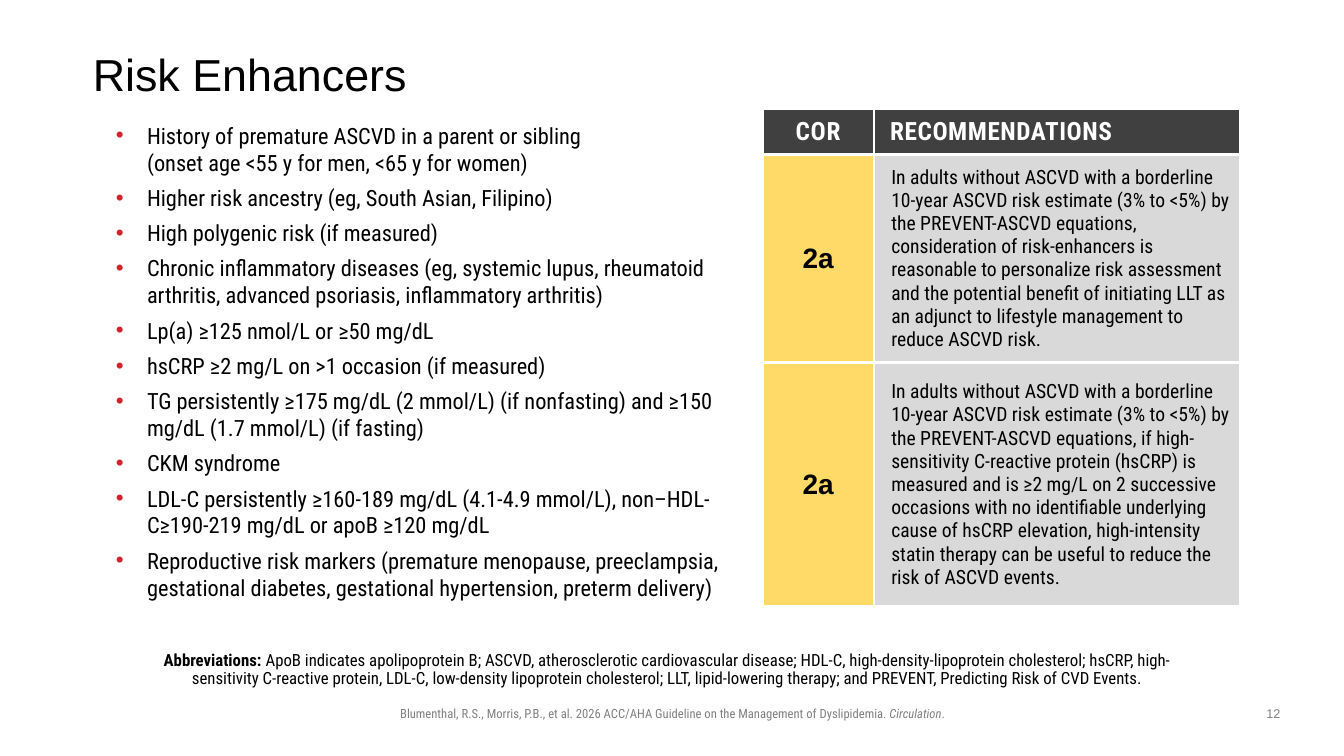
from copy import deepcopy

from lxml import etree
from pptx import Presentation
from pptx.dml.color import RGBColor
from pptx.enum.text import MSO_ANCHOR as Anchor, MSO_AUTO_SIZE as AutoSize, PP_ALIGN as Align
from pptx.oxml import parse_xml
from pptx.oxml.ns import nsdecls, qn
from pptx.util import Pt

# Content
TITLE = "Risk Enhancers"
ENHANCERS = [
    "History of premature ASCVD in a parent or sibling \n(onset age <55 y for men, <65 y for women)",
    "Higher risk ancestry (eg, South Asian, Filipino)",
    "High polygenic risk (if measured)",
    "Chronic inflammatory diseases (eg, systemic lupus, rheumatoid arthritis, "
    "advanced psoriasis, inflammatory arthritis)",
    "Lp(a) ≥125 nmol/L or ≥50 mg/dL",
    "hsCRP ≥2 mg/L on >1 occasion (if measured)",
    "TG persistently ≥175 mg/dL (2 mmol/L) (if nonfasting) and ≥150 mg/dL (1.7 mmol/L) (if fasting)",
    "CKM syndrome",
    "LDL-C persistently ≥160-189 mg/dL (4.1-4.9 mmol/L), non–HDL-C≥190-219 mg/dL or apoB ≥120 mg/dL",
    "Reproductive risk markers (premature menopause, preeclampsia, gestational diabetes, "
    "gestational hypertension, preterm delivery)",
]
HEADERS = ("COR", "RECOMMENDATIONS")
RECOMMENDATIONS = [
    ("2a", "In adults without ASCVD with a borderline 10-year ASCVD risk estimate (3% to <5%) by the "
           "PREVENT-ASCVD equations, consideration of risk-enhancers is reasonable to personalize risk "
           "assessment and the potential benefit of initiating LLT as an adjunct to lifestyle management "
           "to reduce ASCVD risk."),
    ("2a", "In adults without ASCVD with a borderline 10-year ASCVD risk estimate (3% to <5%) by the "
           "PREVENT-ASCVD equations, if high-sensitivity C-reactive protein (hsCRP) is measured and is "
           "≥2 mg/L on 2 successive occasions with no identifiable underlying cause of hsCRP elevation, "
           "high-intensity statin therapy can be useful to reduce the risk of ASCVD events."),
]
ABBREVIATIONS = (
    "Abbreviations: ",
    "ApoB indicates apolipoprotein B; ASCVD, atherosclerotic cardiovascular disease; HDL-C, "
    "high-density-lipoprotein cholesterol; hsCRP, high-sensitivity C-reactive protein, LDL-C, "
    "low-density lipoprotein cholesterol; LLT, lipid-lowering therapy; and PREVENT, Predicting Risk "
    "of CVD Events.",
)
CITATION = (
    "Blumenthal, R.S., Morris, P.B., et al. 2026 ACC/AHA Guideline on the Management of Dyslipidemia. ",
    "Circulation",
    ".",
)
SLIDE_NUMBER = "12"

# Lengths in px, 100 to the inch
PX = 9144
SLIDE_SIZE = (1333, 750)
TITLE_BOX = (92, 40, 1150, 72)
LIST_BOX = (105, 116, 628, 490)
TABLE_BOX = (756, 108, 474, 494)
COLUMN_WIDTHS = (111, 363)
ROW_HEIGHTS = (45, 207, 242)
ABBREVIATIONS_BOX = (161, 642, 1012, 46)
CITATION_BOX = (236, 695, 862, 25)
NUMBER_BOX = (1242, 695, 42, 26)
BULLET_INDENT = 31

BLACK = RGBColor(0x00, 0x00, 0x00)
WHITE = RGBColor(0xFF, 0xFF, 0xFF)
GRAY = RGBColor(0x80, 0x80, 0x80)
DARK = RGBColor(0x40, 0x40, 0x40)
LIGHT = RGBColor(0xD9, 0xD9, 0xD9)
YELLOW = RGBColor(0xFF, 0xDA, 0x68)
RED = RGBColor(0xCF, 0x24, 0x2A)

ROBOTO = "Roboto Condensed"
TITLE_FONT = dict(name="Arial", size=Pt(32), color=BLACK)
LIST_FONT = dict(name=ROBOTO, size=Pt(16), color=BLACK)
HEADER_FONT = dict(name=ROBOTO, size=Pt(18), color=WHITE, bold=True)
CLASS_FONT = dict(name="Arial", size=Pt(20), color=BLACK, bold=True)
BODY_FONT = dict(name=ROBOTO, size=Pt(14), color=BLACK, bold=False)
SMALL_FONT = dict(name=ROBOTO, size=Pt(12), color=BLACK)
CITATION_FONT = dict(name=ROBOTO, size=Pt(9), color=GRAY)
NUMBER_FONT = dict(name="Arial", size=Pt(9), color=GRAY)


def set_values(target, values):
    for name, value in values.items():
        setattr(target, name, value)


def add_text(paragraph, text, font):
    """Add one run per line, with line breaks of the same font between them."""
    for index, line in enumerate(text.split("\n")):
        if index:
            paragraph.add_line_break()
        run = paragraph.add_run()
        run.text = line
        set_values(run.font, {key: value for key, value in font.items() if key != "color"})
        run.font.color.rgb = font["color"]
    for line_break in paragraph._p.findall(qn("a:br")):
        line_break.append(deepcopy(run._r.rPr))
    return run


def add_box(slide, box, **frame_format):
    frame = slide.shapes.add_textbox(*(length * PX for length in box)).text_frame
    set_values(frame, dict(word_wrap=True, **frame_format))
    return frame


def add_bullet(paragraph):
    properties = paragraph._p.get_or_add_pPr()
    properties.set("marL", str(BULLET_INDENT * PX))
    properties.set("indent", str(-BULLET_INDENT * PX))
    color = etree.SubElement(properties, qn("a:buClr"))
    etree.SubElement(color, qn("a:srgbClr"), val=str(RED))
    etree.SubElement(properties, qn("a:buFont"), typeface="Arial")
    etree.SubElement(properties, qn("a:buChar"), char="•")


def fill_cell(cell, text, font, color, centered, indent=0, margin=None, spacing=0):
    cell.fill.solid()
    cell.fill.fore_color.rgb = color
    cell.vertical_anchor = Anchor.MIDDLE
    if margin is not None:
        for side in ("left", "top", "right", "bottom"):
            setattr(cell, f"margin_{side}", margin * PX)
    for index, side in enumerate("LRTB"):
        border = parse_xml(
            f'<a:ln{side} {nsdecls("a")} w="{Pt(2.25)}"><a:solidFill>'
            f'<a:srgbClr val="{WHITE}"/></a:solidFill></a:ln{side}>')
        cell._tc.get_or_add_tcPr().insert(index, border)
    paragraph = cell.text_frame.paragraphs[0]
    paragraph.alignment = Align.CENTER if centered else Align.LEFT
    paragraph._p.get_or_add_pPr().set("marL", str(indent * PX))
    run = add_text(paragraph, text, font)
    run._r.get_or_add_rPr().set("spc", str(spacing))


def main():
    presentation = Presentation()
    presentation.slide_width, presentation.slide_height = (length * PX for length in SLIDE_SIZE)
    slide = presentation.slides.add_slide(presentation.slide_layouts[5])

    # Title
    title = slide.shapes.title
    set_values(title, dict(zip(("left", "top", "width", "height"),
                               (length * PX for length in TITLE_BOX))))
    set_values(title.text_frame, dict(
        margin_left=0, margin_top=0, margin_right=0, margin_bottom=0, word_wrap=True,
        vertical_anchor=Anchor.MIDDLE, auto_size=AutoSize.NONE))
    paragraph = title.text_frame.paragraphs[0]
    set_values(paragraph, dict(alignment=Align.LEFT, line_spacing=0.9))
    add_text(paragraph, TITLE, TITLE_FONT)

    # Bulleted risk enhancers
    frame = add_box(slide, LIST_BOX)
    for index, enhancer in enumerate(ENHANCERS):
        paragraph = frame.add_paragraph() if index else frame.paragraphs[0]
        add_bullet(paragraph)
        paragraph.space_after = Pt(6)
        add_text(paragraph, enhancer, LIST_FONT)

    # Recommendation table
    table = slide.shapes.add_table(len(ROW_HEIGHTS), len(COLUMN_WIDTHS),
                                   *(length * PX for length in TABLE_BOX)).table
    table.horz_banding = False
    for column, width in zip(table.columns, COLUMN_WIDTHS):
        column.width = width * PX
    for row, height in zip(table.rows, ROW_HEIGHTS):
        row.height = height * PX
    fill_cell(table.cell(0, 0), HEADERS[0], HEADER_FONT, DARK, True, spacing=50)
    fill_cell(table.cell(0, 1), HEADERS[1], HEADER_FONT, DARK, False, indent=6, spacing=40)
    for row, (class_name, advice) in enumerate(RECOMMENDATIONS, 1):
        fill_cell(table.cell(row, 0), class_name, CLASS_FONT, YELLOW, True, margin=5)
        fill_cell(table.cell(row, 1), advice, BODY_FONT, LIGHT, False, indent=12, margin=5)

    # Abbreviations
    frame = add_box(slide, ABBREVIATIONS_BOX, margin_left=0, vertical_anchor=Anchor.BOTTOM)
    paragraph = frame.paragraphs[0]
    set_values(paragraph, dict(alignment=Align.CENTER, line_spacing=0.9))
    for text, bold in zip(ABBREVIATIONS, (True, False)):
        add_text(paragraph, text, dict(SMALL_FONT, bold=bold))

    # Citation
    paragraph = add_box(slide, CITATION_BOX).paragraphs[0]
    paragraph.alignment = Align.CENTER
    for text, italic in zip(CITATION, (False, True, False)):
        add_text(paragraph, text, dict(CITATION_FONT, italic=italic))

    # Slide number
    paragraph = add_box(slide, NUMBER_BOX).paragraphs[0]
    paragraph.alignment = Align.CENTER
    add_text(paragraph, SLIDE_NUMBER, NUMBER_FONT)

    presentation.save("out.pptx")


if __name__ == "__main__":
    main()
